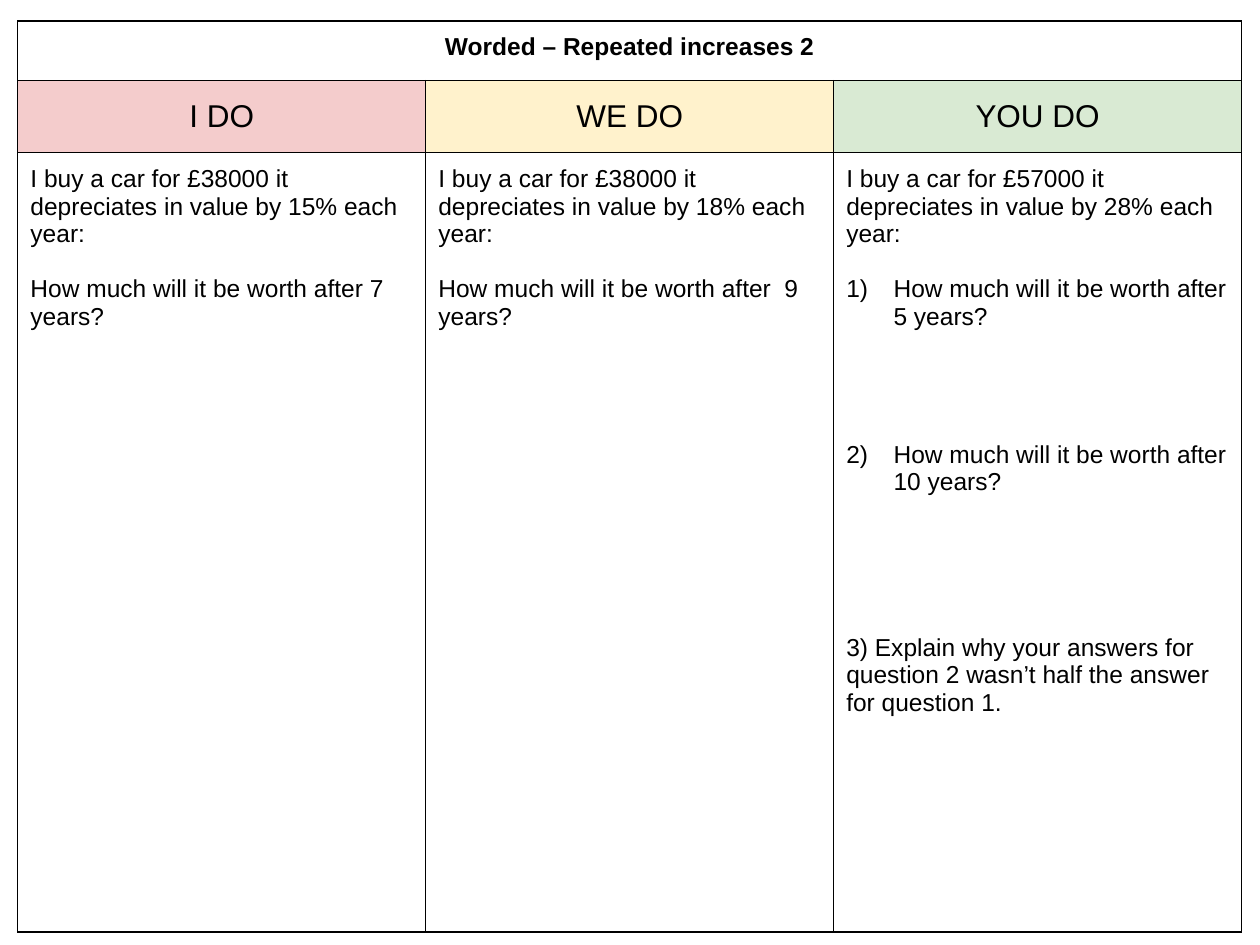
import lxml.etree
import pptx
import pptx.dml.color
import pptx.enum.text
import pptx.oxml.ns
import pptx.util

Pt = pptx.util.Pt
ALIGN = pptx.enum.text.PP_ALIGN
ANCHOR = pptx.enum.text.MSO_ANCHOR

FONT = "Arial"
BLACK = "000000"
LINE = 15.75  # height of one 14 pt line
INDENT = 27
COLUMN_WIDTH = 233.1
ROW_HEIGHTS = (34, 41.4, 445.2)
TITLE = "Worded – Repeated increases 2"
HEADINGS = (("I DO", "F4CCCC"), ("WE DO", "FFF2CC"), ("YOU DO", "D9EAD3"))

# Each paragraph: text, blank lines left above it, whether it is numbered
QUESTIONS = (
    (
        ("I buy a car for £38000 it depreciates in value by 15% each year:", 0, False),
        ("How much will it be worth after 7 years?", 1, False),
    ),
    (
        ("I buy a car for £38000 it depreciates in value by 18% each year:", 0, False),
        ("How much will it be worth after  9 years?", 1, False),
    ),
    (
        ("I buy a car for £57000 it depreciates in value by 28% each year:", 0, False),
        ("How much will it be worth after 5 years?", 1, True),
        ("How much will it be worth after 10 years?", 4, True),
        ("3) Explain why your answers for question 2 wasn’t half the answer "
         "for question 1.", 5, False),
    ),
)


def color(hex_string):
    return pptx.dml.color.RGBColor.from_string(hex_string)


def add_element(parent, tag, **attributes):
    return lxml.etree.SubElement(parent, pptx.oxml.ns.qn(tag), attributes)


def set_borders(cell):
    properties = cell._tc.get_or_add_tcPr()
    for side in ("a:lnL", "a:lnR", "a:lnT", "a:lnB"):
        line = add_element(properties, side, w=str(Pt(0.75)))
        fill = add_element(line, "a:solidFill")
        add_element(fill, "a:srgbClr", val=BLACK)


def style_cell(cell, fill=None, anchor=ANCHOR.TOP):
    set_borders(cell)
    cell.margin_left = cell.margin_right = Pt(7.2)
    cell.margin_top = cell.margin_bottom = Pt(7.2)
    cell.vertical_anchor = anchor
    if fill:
        cell.fill.solid()
        cell.fill.fore_color.rgb = color(fill)
    else:
        cell.fill.background()


def format_paragraph(paragraph, size, bold=False, align=ALIGN.LEFT):
    paragraph.alignment = align
    for run in paragraph.runs:
        run.font.name = FONT
        run.font.size = Pt(size)
        run.font.bold = bold
        run.font.color.rgb = color(BLACK)


def number_paragraph(paragraph):
    properties = paragraph._p.get_or_add_pPr()
    properties.set("marL", str(Pt(INDENT)))
    properties.set("indent", str(-Pt(INDENT)))
    add_element(properties, "a:buAutoNum", type="arabicParenR")


def fill_questions(cell, questions):
    text_frame = cell.text_frame
    text_frame.text = "\n".join(text for text, _, _ in questions)
    for paragraph, (_, blank_lines, numbered) in zip(text_frame.paragraphs, questions):
        format_paragraph(paragraph, 14)
        paragraph.space_before = Pt(blank_lines * LINE)
        if numbered:
            number_paragraph(paragraph)


def fill_heading(cell, text, size, bold=False):
    cell.text_frame.text = text
    format_paragraph(cell.text_frame.paragraphs[0], size, bold, ALIGN.CENTER)


def add_lesson_table(slide):
    columns = len(HEADINGS)
    table = slide.shapes.add_table(
        len(ROW_HEIGHTS), columns, Pt(10.2), Pt(12),
        Pt(columns * COLUMN_WIDTH), Pt(sum(ROW_HEIGHTS))).table
    table.first_row = table.horz_banding = False
    for column in table.columns:
        column.width = Pt(COLUMN_WIDTH)
    for row, height in zip(table.rows, ROW_HEIGHTS):
        row.height = Pt(height)
    return table


def main():
    presentation = pptx.Presentation()
    presentation.slide_width, presentation.slide_height = Pt(720), Pt(540)
    slide = presentation.slides.add_slide(presentation.slide_layouts[6])
    table = add_lesson_table(slide)

    table.cell(0, 0).merge(table.cell(0, len(HEADINGS) - 1))
    fill_heading(table.cell(0, 0), TITLE, 14, bold=True)
    for column, ((heading, fill), questions) in enumerate(zip(HEADINGS, QUESTIONS)):
        style_cell(table.cell(0, column))
        style_cell(table.cell(1, column), fill, ANCHOR.MIDDLE)
        fill_heading(table.cell(1, column), heading, 18)
        style_cell(table.cell(2, column))
        fill_questions(table.cell(2, column), questions)

    presentation.save("out.pptx")


if __name__ == "__main__":
    main()
